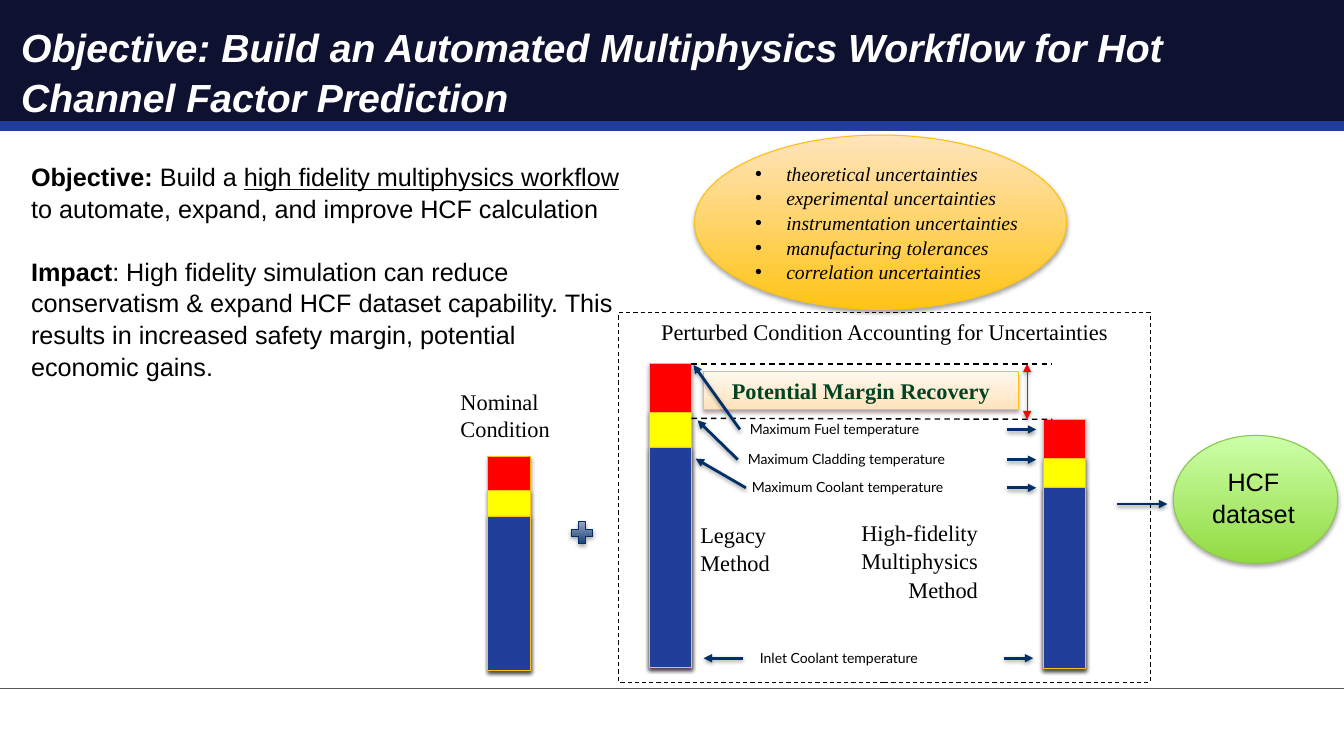
"""Build the hot channel factor objective slide."""
from dataclasses import dataclass

from lxml import etree
from pptx import Presentation
from pptx import util as u
from pptx.dml.color import RGBColor
from pptx.enum import dml, shapes, text
from pptx.oxml.ns import qn

COLUMNS, ROWS = 133.33, 75
LEFT, CENTER, RIGHT = text.PP_ALIGN.LEFT, text.PP_ALIGN.CENTER, text.PP_ALIGN.RIGHT


@dataclass(frozen=True)
class Theme:
    """Colours, fonts and type sizes of the slide."""
    sans: str = "Arial"
    serif: str = "Times New Roman"
    label: str = "Lato"
    title_size: int = 28
    body_size: int = 18
    caption_size: int = 16
    list_size: int = 14
    label_size: int = 10
    leading: float = 1.05
    black: str = "000000"
    white: str = "FFFFFF"
    header: str = "0E1130"
    blue: str = "213E9A"
    red: str = "FF0000"
    yellow: str = "FFFF00"
    gold: str = "FFC210"
    green: str = "8DC64E"
    dark_green: str = "004424"
    navy: str = "003066"
    gray: str = "595959"
    gold_blend: tuple = ("FFC416", "FFE4BD")
    cream_blend: tuple = ("FFE4BD", "FFF7EE")
    green_blend: tuple = ("91DA41", "CDFFA9")
    navy_blend: tuple = ("003066", "B1B7D2")


THEME = Theme()


def grid(*cells):
    """Convert grid cells of a tenth of an inch to lengths."""
    return [u.Inches(cell / 10) for cell in cells]


def apply(target, formats):
    """Set every attribute named in a dict of format values."""
    for name, value in formats.items():
        setattr(target, name, value)


def add_element(parent, tag, **attributes):
    """Append a drawing element with attributes."""
    return etree.SubElement(parent, qn(tag), {key: str(value) for key, value in attributes.items()})


def add_shadow(effects, alpha=35, distance=1.8):
    """Put a soft downward shadow in an effect list."""
    shadow = add_element(effects, "a:outerShdw", blurRad=u.Pt(3.1), dist=u.Pt(distance),
                         dir=90 * 60000, rotWithShape=0)
    color = add_element(shadow, "a:srgbClr", val=THEME.black)
    add_element(color, "a:alpha", val=alpha * 1000)


def set_line(line, color, width, dashed=False):
    """Colour, size and optionally dash a line."""
    line.color.rgb = RGBColor.from_string(color)
    line.width = u.Pt(width)
    if dashed:
        line.dash_style = dml.MSO_LINE.DASH


def add_block(slide, kind, cells, fill=None, outline=None, dashed=False, shadow=True):
    """Add a preset shape with a plain, blended or empty fill."""
    shape = slide.shapes.add_shape(kind, *grid(*cells))
    shape.shadow.inherit = False
    if shadow:
        add_shadow(shape.element.spPr.find(qn("a:effectLst")))
    if fill is None:
        shape.fill.background()
    elif isinstance(fill, str):
        shape.fill.solid()
        shape.fill.fore_color.rgb = RGBColor.from_string(fill)
    else:
        shape.fill.gradient()
        shape.fill.gradient_angle = 90
        for stop, color, position in zip(shape.fill.gradient_stops, fill, (0, 1)):
            stop.color.rgb = RGBColor.from_string(color)
            stop.position = position
    if outline:
        set_line(shape.line, outline, 0.75, dashed)
    else:
        shape.line.fill.background()
    return shape


def add_line(slide, start, end, color, width, dashed=False, arrows=()):
    """Add a straight line with arrowheads at the named ends."""
    line = slide.shapes.add_connector(shapes.MSO_CONNECTOR.STRAIGHT, *grid(*start, *end))
    set_line(line.line, color, width, dashed)
    for arrow in arrows:
        add_element(line.line._get_or_add_ln(), arrow, type="triangle")
    effects = add_element(line.element.spPr, "a:effectLst")
    if arrows:
        add_shadow(effects, 38, 1.6)


def write(shape, paragraphs, size, font, color=THEME.black, align=LEFT, leading=1.0,
          gap=0, bullet=False, **formats):
    """Write paragraphs of (words, run format) pairs into a shape."""
    frame = shape.text_frame
    frame.word_wrap = True
    for index, runs in enumerate(paragraphs):
        paragraph = frame.add_paragraph() if index else frame.paragraphs[0]
        if bullet:
            properties = paragraph._p.get_or_add_pPr()
            apply_indent = {"marL": u.Inches(0.31), "indent": -u.Inches(0.31)}
            for name, value in apply_indent.items():
                properties.set(name, str(value))
            add_element(properties, "a:buFont", typeface=THEME.sans)
            add_element(properties, "a:buChar", char="•")
        apply(paragraph, {"alignment": align, "line_spacing": leading,
                          "space_before": u.Pt(gap if index else 0)})
        for words, run_format in runs:
            run = paragraph.add_run()
            run.text = words
            apply(run.font, {"size": u.Pt(size), "name": font, **formats, **run_format})
            run.font.color.rgb = RGBColor.from_string(color)


def add_text(slide, cells, words, size=THEME.caption_size, font=THEME.serif, **options):
    """Add a text box holding a string or a list of paragraphs."""
    box = slide.shapes.add_textbox(*grid(*cells))
    paragraphs = [[(words, {})]] if isinstance(words, str) else words
    write(box, paragraphs, size, font, **options)
    box.text_frame.auto_size = text.MSO_AUTO_SIZE.SHAPE_TO_FIT_TEXT


def place(placeholder, cells):
    """Move a placeholder onto the grid, in front of what is drawn so far."""
    apply(placeholder, dict(zip(("left", "top", "width", "height"), grid(*cells))))
    apply(placeholder.text_frame, {"auto_size": text.MSO_AUTO_SIZE.NONE,
                                   "vertical_anchor": text.MSO_ANCHOR.TOP})
    placeholder.element.getparent().append(placeholder.element)


def add_header(slide):
    """Draw the header band, the rules and the title."""
    add_block(slide, shapes.MSO_SHAPE.RECTANGLE, (-0.3, 0, 134, 12.5), THEME.header, shadow=False)
    for row, color, width in ((12.5, THEME.blue, 6.75), (68.3, THEME.gray, 1)):
        add_line(slide, (-0.3, row), (133.7, row), color, width)
    title = slide.shapes.title
    place(title, (2.1, 2.1, 127.8, 7.5))
    apply(title.text_frame, {"margin_left": 0, "margin_top": 0, "margin_bottom": 0,
                             "margin_right": u.Inches(0.5)})
    words = "Objective: Build an Automated Multiphysics Workflow for Hot Channel Factor Prediction"
    write(title, [[(words, {})]], THEME.title_size, THEME.sans, THEME.white,
          leading=THEME.leading, bold=True, italic=True)


def add_uncertainties(slide):
    """Draw the oval with the list of uncertainties."""
    add_block(slide, shapes.MSO_SHAPE.OVAL, (68.9, 13.4, 36.9, 17.3), THEME.gold_blend, THEME.gold)
    body = slide.placeholders[1]
    place(body, (73.9, 15.4, 30.7, 12.8))
    items = ("theoretical uncertainties", "experimental uncertainties",
             "instrumentation uncertainties", "manufacturing tolerances",
             "correlation uncertainties")
    write(body, [[(item, {})] for item in items], THEME.list_size, THEME.serif,
          leading=THEME.leading, bullet=True, italic=True)


def add_bar(slide, left, bottom, heights):
    """Stack the fuel, cladding and coolant levels of one bar."""
    for height, color in zip(heights, (THEME.red, THEME.yellow, THEME.blue)):
        add_block(slide, shapes.MSO_SHAPE.RECTANGLE, (left, bottom - height, 4.2, height),
                  color, THEME.gold)


def add_temperatures(slide):
    """Label the temperature levels and point to both bars."""
    levels = (("Maximum Fuel", 73.4, 41.2, (73.4, 42.6), (68.8, 36.2), 99.9),
              ("Maximum Cladding", 73.2, 44.2, (73.2, 45.6), (69.2, 41.7), 99.9),
              ("Maximum Coolant", 73.6, 47, (74, 48.4), (69, 45.5), 99.9),
              ("Inlet Coolant", 74.4, 63.9, (73.7, 65.3), (69.8, 65.3), 99.6))
    for name, left, top, start, end, right in levels:
        add_text(slide, (left, top, 28.5, 2.7), f"{name} temperature",
                 THEME.label_size, THEME.label)
        row = start[1]
        for tail, tip in ((start, end), ((right, row), (right + 2.9, row))):
            add_line(slide, tail, tip, THEME.navy, 2, arrows=("a:tailEnd",))


def add_margin(slide):
    """Mark the margin between the tops of the perturbed bars."""
    for start, end in ((36.1, 36.1), (41.5, 41.6)):
        add_line(slide, (68.6, start), (104.4, end), THEME.black, 1, dashed=True)
    margin = add_block(slide, shapes.MSO_SHAPE.RECTANGLE, (69.8, 36.9, 31.2, 3.7),
                       THEME.cream_blend, THEME.gold)
    write(margin, [[("Potential Margin Recovery", {})]], THEME.caption_size, THEME.serif,
          THEME.dark_green, CENTER, bold=True)
    add_line(slide, (101.9, 36.1), (101.9, 41.6), THEME.red, 0.75,
             arrows=("a:headEnd", "a:tailEnd"))


def main():
    """Build and save the slide."""
    presentation = Presentation()
    apply(presentation, dict(zip(("slide_width", "slide_height"), grid(COLUMNS, ROWS))))
    slide = presentation.slides.add_slide(presentation.slide_layouts[1])
    add_header(slide)
    add_uncertainties(slide)
    add_block(slide, shapes.MSO_SHAPE.RECTANGLE, (61.4, 31, 52.7, 36.7),
              outline=THEME.black, dashed=True, shadow=False)
    add_text(slide, (2.1, 15.4, 60.4, 25.2), [
        [("Objective: ", {"bold": True}), ("Build a ", {}),
         ("high fidelity multiphysics workflow", {"underline": True}),
         (" to automate, expand, and improve HCF calculation", {})],
        [("Impact", {"bold": True}),
         (": High fidelity simulation can reduce conservatism & expand HCF dataset capability. "
          "This results in increased safety margin, potential economic gains.", {})],
    ], THEME.body_size, THEME.sans, leading=THEME.leading, gap=22)
    add_bar(slide, 48.4, 66.5, (21.2, 17.8, 15.3))
    add_bar(slide, 64.4, 66.2, (30.1, 25.3, 21.8))
    add_bar(slide, 103.5, 66.3, (24.7, 20.8, 17.9))
    add_margin(slide)
    add_temperatures(slide)
    add_text(slide, (44.7, 38, 11, 6.4), "Nominal Condition")
    add_text(slide, (64.6, 31.1, 47.1, 3.7), "Perturbed Condition Accounting for Uncertainties")
    add_text(slide, (68.5, 51.1, 11, 6.4), "Legacy Method", leading=THEME.leading)
    add_text(slide, (82.8, 50.9, 15.2, 9.1), "High-fidelity Multiphysics Method",
             align=RIGHT, leading=THEME.leading)
    add_line(slide, (110.8, 50), (115.8, 50), THEME.navy, 2, arrows=("a:tailEnd",))
    add_block(slide, shapes.MSO_SHAPE.OVAL, (116.4, 43.2, 16.3, 12.7),
              THEME.green_blend, THEME.green)
    add_text(slide, (118.8, 45.6, 11.1, 7.1), "HCF dataset", THEME.body_size, THEME.sans,
             align=CENTER, leading=THEME.leading)
    add_block(slide, shapes.MSO_SHAPE.MATH_PLUS, (56.3, 51.4, 2.9, 2.9),
              THEME.navy_blend, THEME.navy)
    presentation.save("out.pptx")


if __name__ == "__main__":
    main()
